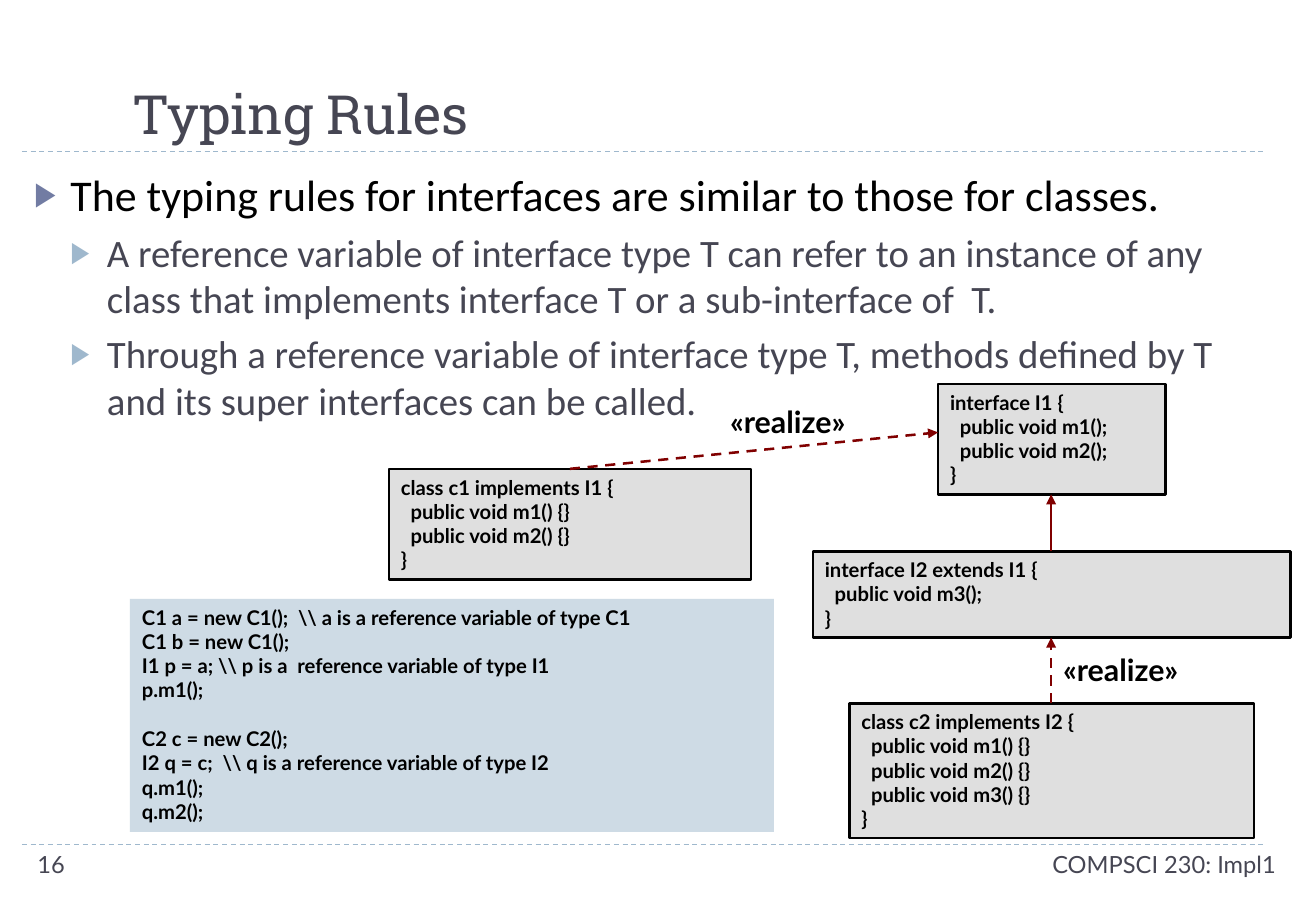
from lxml import etree
from pptx import Presentation, util as u
from pptx.dml import color
from pptx.enum import dml, shapes, text
from pptx.oxml import ns

PX = 9144  # 100 px to the inch
INK, BLUE, BLACK, MAROON = "464653", "9FB8CD", "000000", "800000"


def write(frame, content, font="Lato", size=12, colour=BLACK, bold=False,
          align="LEFT", anchor="TOP", gap=0, indent=0, bullet=None, new=True):
    """Write each line of content as a paragraph, after what is there if not new."""
    frame.word_wrap = True
    frame.auto_size = text.MSO_AUTO_SIZE.NONE
    frame.vertical_anchor = getattr(text.MSO_ANCHOR, anchor)
    for number, line in enumerate(content.split("\n")):
        first = new and number == 0
        paragraph = frame.paragraphs[0] if first else frame.add_paragraph()
        paragraph.text = line
        paragraph.alignment = getattr(text.PP_ALIGN, align)
        if bullet:
            properties = paragraph._p.get_or_add_pPr()
            properties.set("marL", str(indent * PX))
            properties.set("indent", str(-30 * PX))
            tint = etree.SubElement(properties, ns.qn("a:buClr"))
            etree.SubElement(tint, ns.qn("a:srgbClr"), val=bullet)
            etree.SubElement(properties, ns.qn("a:buSzPct"), val="76000")
            etree.SubElement(properties, ns.qn("a:buChar"), char="▶")
        paragraph.space_before = u.Pt(0 if first else gap)
        paragraph.font.name = font
        paragraph.font.size = u.Pt(size)
        paragraph.font.bold = bold
        paragraph.font.color.rgb = color.RGBColor.from_string(colour)


def connect(start, end, colour, width, dashed=True, arrow=True):
    """Draw a straight line between two points in px."""
    line = slide.shapes.add_connector(
        shapes.MSO_CONNECTOR.STRAIGHT, *[value * PX for value in start + end])
    line.line.color.rgb = color.RGBColor.from_string(colour)
    line.line.width = u.Pt(width)
    if dashed:
        line.line.dash_style = dml.MSO_LINE.DASH
    if arrow:
        etree.SubElement(line.line._get_or_add_ln(), ns.qn("a:tailEnd"), type="triangle")
    etree.SubElement(line._element.spPr, ns.qn("a:effectLst"))


presentation = Presentation()
presentation.slide_width, presentation.slide_height = 1083 * PX, 750 * PX
slide = presentation.slides.add_slide(presentation.slide_layouts[1])

# Rules under the title and above the footer
for y in (695, 125):
    connect((18, y), (1042, y), BLUE, 0.75, arrow=False)

# Title and body
title, body = slide.placeholders
title.left, title.top, title.width, title.height = [v * PX for v in (99, 17, 955, 108)]
write(title.text_frame, "Typing Rules", font="Roboto Slab", size=32, colour=INK,
      anchor="BOTTOM")
body.left, body.top, body.width, body.height = [v * PX for v in (18, 133, 1038, 558)]
write(body.text_frame, "The typing rules for interfaces are similar to those for classes.",
      font="Calibri", size=26, indent=30, bullet="727CA3")
write(body.text_frame,
      "A reference variable of interface type T can refer to an instance of any class "
      "that implements interface T or a sub-interface of  T.\n"
      "Through a reference variable of interface type T, methods defined by T and its "
      "super interfaces can be called.",
      font="Calibri", size=23, colour=INK, gap=5, indent=60, bullet=BLUE, new=False)
for paragraph in body.text_frame.paragraphs[1:]:
    paragraph.level = 1

# Code boxes: position, fill, outlined or not, code blocks
code_boxes = [
    ((772, 316, 187, 91), "C0C0C0", True,
     ["interface I1 {\n  public void m1();\n  public void m2();\n}"]),
    ((320, 386, 298, 91), "C0C0C0", True,
     ["class c1 implements I1 {\n  public void m1() {}\n  public void m2() {}\n}"]),
    ((669, 454, 393, 71), "C0C0C0", True,
     ["interface I2 extends I1 {\n  public void m3();\n}"]),
    ((699, 579, 333, 111), "C0C0C0", True,
     ["class c2 implements I2 {\n  public void m1() {}\n  public void m2() {}\n"
      "  public void m3() {}\n}"]),
    ((107, 493, 530, 192), BLUE, False,
     ["C1 a = new C1();  \\\\ a is a reference variable of type C1\n"
      "C1 b = new C1();\n"
      "I1 p = a; \\\\ p is a  reference variable of type I1\n"
      "p.m1();",
      "C2 c = new C2();\n"
      "I2 q = c;  \\\\ q is a reference variable of type I2\n"
      "q.m1();\n"
      "q.m2();"]),
]
for position, fill, outlined, blocks in code_boxes:
    box = slide.shapes.add_shape(shapes.MSO_SHAPE.RECTANGLE, *[v * PX for v in position])
    box.shadow.inherit = False
    box.fill.solid()
    box.fill.fore_color.rgb = color.RGBColor.from_string(fill)
    tint = box._element.spPr.find(".//" + ns.qn("a:srgbClr"))
    etree.SubElement(tint, ns.qn("a:alpha"), val="50000")
    if outlined:
        box.line.color.rgb = color.RGBColor.from_string(BLACK)
        box.line.width = u.Pt(1.5)
    else:
        box.line.fill.background()
    for number, block in enumerate(blocks):
        start = len(box.text_frame.paragraphs)
        write(box.text_frame, block, bold=True, new=number == 0)
        if number:  # one line of space between blocks
            box.text_frame.paragraphs[start].space_before = u.Pt(14.4)

# Arrows between the types
connect((469, 386), (772, 356), MAROON, 1.5)
connect((865, 454), (865, 407), MAROON, 1.5, dashed=False)
connect((865, 579), (865, 525), MAROON, 1.5)

# Arrow labels and footer
labels = [
    ((865, 531, 140, 40), "«realize»", dict(size=18, bold=True)),
    ((591, 327, 140, 40), "«realize»", dict(size=18, bold=True)),
    ((789, 695, 271, 40), "COMPSCI 230: Impl1", dict(size=14, colour=INK, align="RIGHT")),
    ((21, 695, 235, 40), "16", dict(size=14, colour=INK)),
]
for position, content, style in labels:
    label = slide.shapes.add_textbox(*[v * PX for v in position])
    write(label.text_frame, content, **style)

presentation.save("out.pptx")
